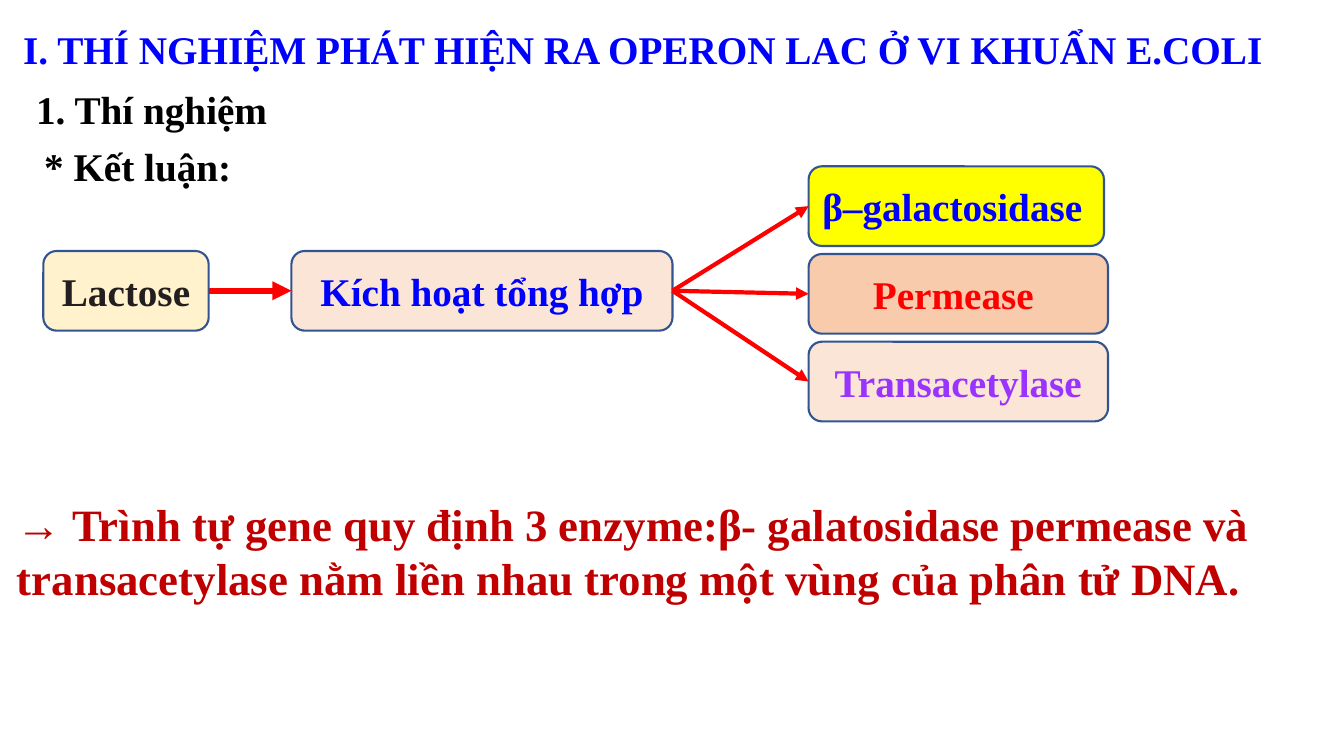
from dataclasses import dataclass
from typing import NamedTuple

from lxml.etree import SubElement
from pptx import Presentation
from pptx.dml.color import RGBColor
from pptx.enum.shapes import MSO_CONNECTOR as Connector, MSO_SHAPE as Preset
from pptx.enum.text import MSO_ANCHOR as Anchor, MSO_AUTO_SIZE as AutoSize, PP_ALIGN as Align
from pptx.oxml.ns import qn
from pptx.util import Emu, Pt

EMU_PER_PX = 9144
TOP, LEFT, BOTTOM, RIGHT = range(4)


@dataclass(frozen=True)
class Theme:
    """Colours, font and type sizes of the slide."""
    font: str = "Times New Roman"
    size: int = 28
    conclusion_size: int = 32
    blue: str = "0000FF"
    black: str = "000000"
    charcoal: str = "231F20"
    red: str = "FF0000"
    purple: str = "9933FF"
    dark_red: str = "C00000"
    outline: str = "325491"
    cream: str = "FFF2CC"
    blush: str = "FBE5D6"
    peach: str = "F8CBAD"
    yellow: str = "FFFF00"


THEME = Theme()


class Box(NamedTuple):
    """A rectangle in px."""
    left: int
    top: int
    width: int
    height: int

    def emu(self):
        """Return the four lengths in EMU."""
        return [px(length) for length in self]


def px(length):
    """Turn px into EMU."""
    return Emu(length * EMU_PER_PX)


def write(shape, text, color, size=THEME.size, align=Align.LEFT, anchor=Anchor.TOP):
    """Put one bold paragraph in a shape and return it."""
    frame = shape.text_frame
    frame.text = text
    frame.word_wrap = True
    frame.auto_size = AutoSize.NONE
    frame.vertical_anchor = anchor
    paragraph = frame.paragraphs[0]
    paragraph.alignment = align
    font = paragraph.runs[0].font
    font.name, font.size, font.bold = THEME.font, Pt(size), True
    font.color.rgb = RGBColor.from_string(color)
    return paragraph


def add_title(slide, box, text):
    """Place the title placeholder in its box."""
    title = slide.shapes.title
    title.left, title.top, title.width, title.height = box.emu()
    write(title, text, THEME.blue)


def add_text(slide, box, text, color, size=THEME.size):
    """Add a text box and return its paragraph."""
    return write(slide.shapes.add_textbox(*box.emu()), text, color, size)


def add_node(slide, box, text, fill, color, align=Align.CENTER):
    """Add a rounded box with a label."""
    node = slide.shapes.add_shape(Preset.ROUNDED_RECTANGLE, *box.emu())
    node.shadow.inherit = False
    node.fill.solid()
    node.fill.fore_color.rgb = RGBColor.from_string(fill)
    node.line.color.rgb = RGBColor.from_string(THEME.outline)
    node.line.width = Pt(1.5)
    write(node, text, color, align=align, anchor=Anchor.MIDDLE)
    return node


def add_arrow(slide, source, target, width):
    """Join the right side of one node to the left side of another."""
    arrow = slide.shapes.add_connector(Connector.STRAIGHT, 0, 0, 0, 0)
    arrow.begin_connect(source, RIGHT)
    arrow.end_connect(target, LEFT)
    arrow.line.color.rgb = RGBColor.from_string(THEME.red)
    arrow.line.width = Pt(width)
    properties = arrow.element.spPr
    SubElement(properties.find(qn("a:ln")), qn("a:tailEnd"), type="triangle")
    SubElement(properties, qn("a:effectLst"))


def add_diagram(slide, box):
    """Draw lactose activating the synthesis of three enzymes."""
    node_height, pitch, enzyme_offset = 79, 87, 759
    middle_top = box.top + 84
    lactose = add_node(slide, Box(box.left, middle_top, 164, node_height),
                       "Lactose", THEME.cream, THEME.charcoal)
    synthesis = add_node(slide, Box(box.left + 246, middle_top, 378, node_height),
                         "Kích hoạt tổng hợp", THEME.blush, THEME.blue)
    add_arrow(slide, lactose, synthesis, 4.5)
    enzymes = [
        ("β–galactosidase", 293, THEME.yellow, THEME.blue, Align.LEFT),
        ("Permease ", 297, THEME.peach, THEME.red, Align.CENTER),
        ("Transacetylase", 297, THEME.blush, THEME.purple, Align.CENTER),
    ]
    for row, (name, width, fill, color, align) in enumerate(enzymes):
        place = Box(box.left + enzyme_offset, box.top + row * pitch, width, node_height)
        enzyme = add_node(slide, place, name, fill, color, align)
        add_arrow(slide, synthesis, enzyme, 3)


def add_conclusion(slide, box):
    """Add the closing statement."""
    paragraph = add_text(
        slide, box,
        "→ Trình tự gene quy định 3 enzyme:β- galatosidase permease và "
        "transacetylase nằm liền nhau trong một vùng của phân tử DNA.",
        THEME.dark_red, THEME.conclusion_size)
    paragraph.space_after = Pt(3)


def main():
    """Build and save the presentation."""
    presentation = Presentation()
    presentation.slide_width, presentation.slide_height = px(1333), px(750)
    slide = presentation.slides.add_slide(presentation.slide_layouts[5])
    add_title(slide, Box(13, 20, 1286, 57),
              "I. THÍ NGHIỆM PHÁT HIỆN RA OPERON LAC Ở VI KHUẨN E.COLI")
    add_text(slide, Box(26, 80, 261, 57), "1. Thí nghiệm", THEME.black)
    add_text(slide, Box(34, 136, 253, 57), "* Kết luận:", THEME.black)
    add_diagram(slide, Box(43, 165, 1056, 253))
    add_conclusion(slide, Box(7, 488, 1298, 118))
    presentation.save("out.pptx")


if __name__ == "__main__":
    main()
